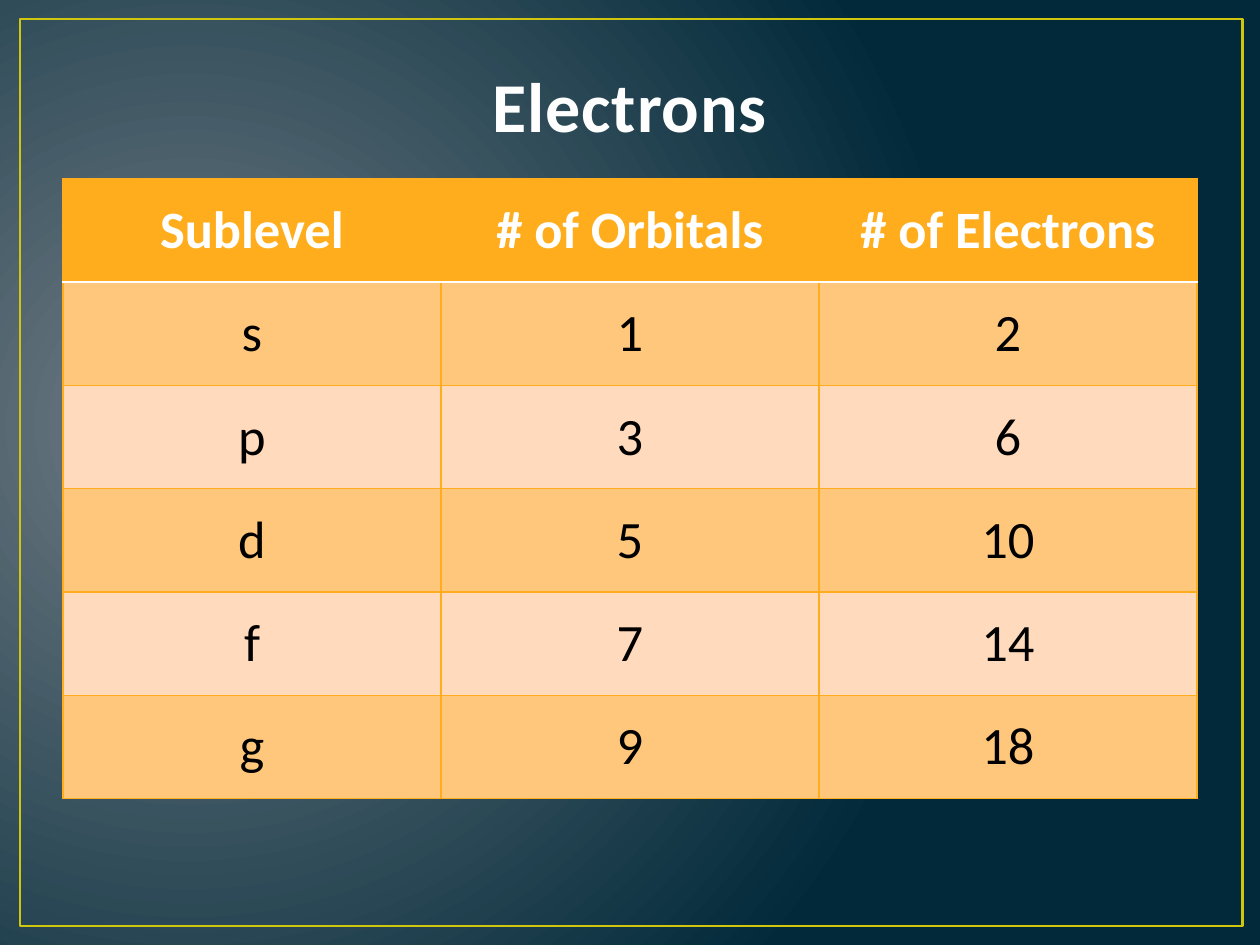
from lxml.etree import SubElement as add_element
from pptx import Presentation
from pptx.dml.color import RGBColor as Rgb
from pptx.enum.shapes import MSO_SHAPE as Shape
from pptx.enum.text import MSO_ANCHOR as Anchor, PP_ALIGN as Align
from pptx.oxml.ns import qn
from pptx.util import Pt

SCALE = 9144
FONT = "Calibri"
COLORS = {
    "glow": "717C84", "night": "01293A", "frame": "CFC60D",
    "title": "FEFEFE", "title_edge": "384F55", "orange": "FFAD1C",
    "band": "FFC77B", "pale": "FFDABC", "white": "FFFFFF", "black": "000000",
}
ROWS = [
    ("Sublevel", "# of Orbitals", "# of Electrons"),
    ("s", "1", "2"),
    ("p", "3", "6"),
    ("d", "5", "10"),
    ("f", "7", "14"),
    ("g", "9", "18"),
]


def px(*lengths):
    """Turn px lengths, 100 to the inch, into EMU."""
    return [length * SCALE for length in lengths]


def color(name):
    """Return the named colour."""
    return Rgb.from_string(COLORS[name])


def add_line(parent, tag, name, points):
    """Append a solid line definition to an XML element."""
    line = add_element(parent, qn(tag), w=str(Pt(points)))
    fill = add_element(line, qn("a:solidFill"))
    add_element(fill, qn("a:srgbClr"), val=COLORS[name])
    return line


def paint_background(page):
    """Fill the page with a radial gradient."""
    fill = page.background.fill
    fill.gradient()
    for stop, name, position in zip(fill.gradient_stops, ("glow", "night"), (0, 1)):
        stop.color.rgb = color(name)
        stop.position = position
    gradient = page.element.find(".//" + qn("a:gradFill"))
    gradient.remove(gradient.find(qn("a:lin")))
    circle = add_element(gradient, qn("a:path"), path="circle")
    add_element(circle, qn("a:fillToRect"), l="15000", t="50000", r="85000", b="60000")


def add_frame(page):
    """Draw the thin border around the page."""
    frame = page.shapes.add_shape(Shape.RECTANGLE, *px(16, 15, 970, 720))
    frame.shadow.inherit = False
    frame.fill.background()
    frame.line.color.rgb = color("frame")
    frame.line.width = Pt(1.5)


def write(text_frame, text, size, name, bold):
    """Write one centred run and return it."""
    para = text_frame.paragraphs[0]
    para.alignment = Align.CENTER
    span = para.add_run()
    span.text = text
    span.font.name = FONT
    span.font.size = Pt(size)
    span.font.bold = bold
    span.font.color.rgb = color(name)
    return span


def add_title(page, text):
    """Add the outlined heading."""
    box = page.shapes.add_textbox(*px(50, 33, 900, 88))
    box.text_frame.word_wrap = True
    box.text_frame.vertical_anchor = Anchor.BOTTOM
    span = write(box.text_frame, text, 40, "title", True)
    properties = span.font._element
    properties.set("spc", "50")
    properties.insert(0, add_line(properties, "a:ln", "title_edge", 1.05))


def style_cell(cell, row):
    """Set the borders and fill of a cell in the given row."""
    properties = cell._tc.get_or_add_tcPr()
    white_edge = {0: "a:lnB", 1: "a:lnT"}.get(row)
    for tag in ("a:lnL", "a:lnR", "a:lnT", "a:lnB"):
        name, points = ("white", 1.25) if tag == white_edge else ("orange", 0.75)
        add_line(properties, tag, name, points)
    cell.fill.solid()
    cell.fill.fore_color.rgb = color("orange" if row == 0 else "band" if row % 2 else "pale")
    cell.vertical_anchor = Anchor.MIDDLE


def add_sublevel_table(page, rows):
    """Add the table of sublevels, orbitals and electrons."""
    size = len(rows), len(rows[0])
    table = page.shapes.add_table(*size, *px(50, 142, 900, 82 * len(rows))).table
    for row, texts in enumerate(rows):
        for column, text in enumerate(texts):
            cell = table.cell(row, column)
            style_cell(cell, row)
            header = row == 0
            write(cell.text_frame, text, 30, "white" if header else "black", header)


def main():
    """Build and save the deck."""
    deck = Presentation()
    deck.slide_width, deck.slide_height = px(1000, 750)
    page = deck.slides.add_slide(deck.slide_layouts[6])
    paint_background(page)
    add_frame(page)
    add_title(page, "Electrons")
    add_sublevel_table(page, ROWS)
    deck.save("out.pptx")


if __name__ == "__main__":
    main()
